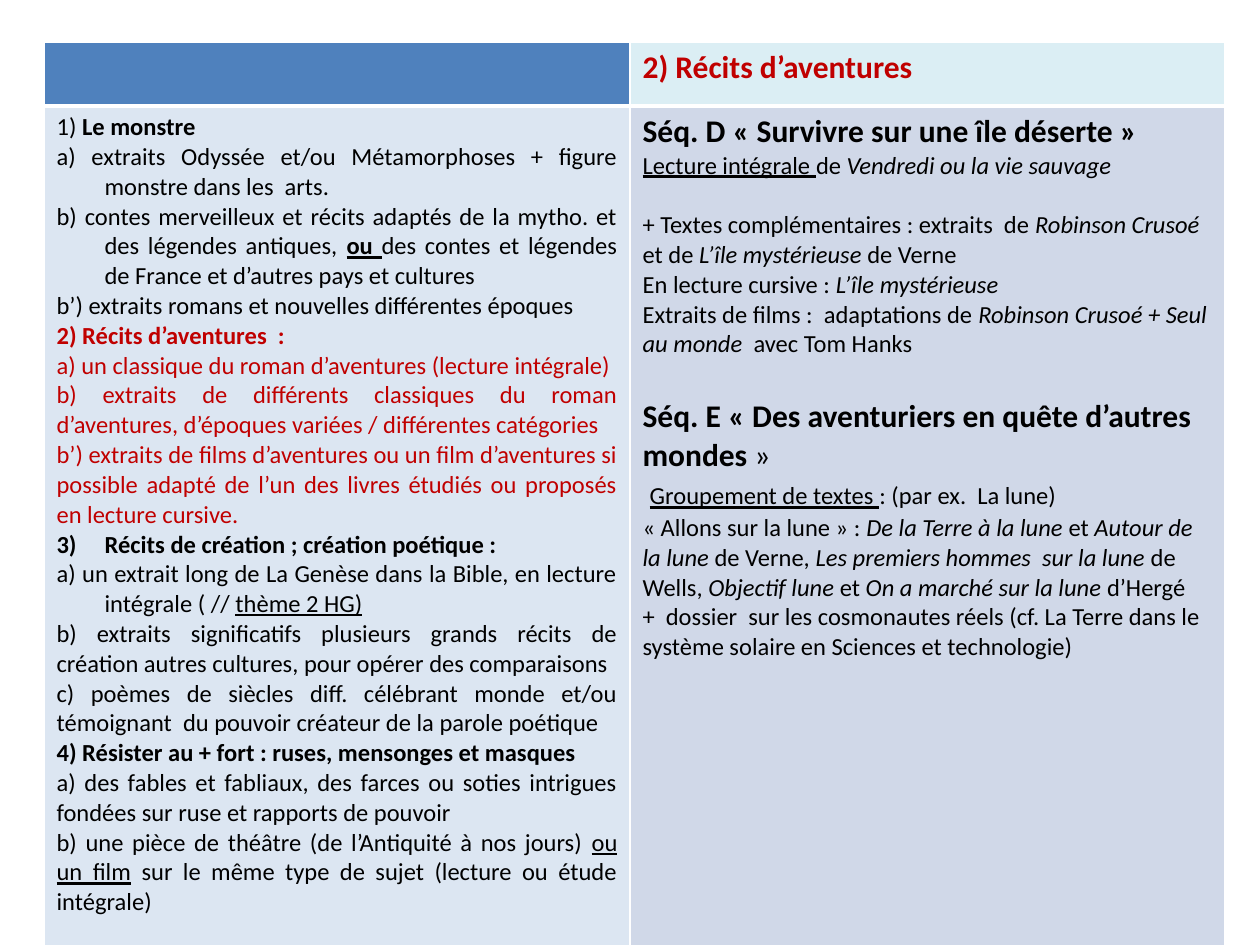
import pptx
import pptx.dml.color
import pptx.enum.text
import pptx.util
from lxml import etree

PX = pptx.util.Inches(1) / 126
BLACK = pptx.dml.color.RGBColor(0x00, 0x00, 0x00)
WHITE = pptx.dml.color.RGBColor(0xFF, 0xFF, 0xFF)
RED = pptx.dml.color.RGBColor(0xC0, 0x00, 0x00)
BLUE = pptx.dml.color.RGBColor(0x4F, 0x81, 0xBD)
PALE_CYAN = pptx.dml.color.RGBColor(0xDB, 0xEE, 0xF4)
PALE_BLUE = pptx.dml.color.RGBColor(0xDC, 0xE6, 0xF2)
GREY_BLUE = pptx.dml.color.RGBColor(0xD0, 0xD8, 0xE8)

FONT = "Calibri"
BODY_SIZE, TITLE_SIZE = 14, 18
HANGING = 48
# Each mark switches its style on or off inside a paragraph; # is the title size.
MARKS = "*_~#"

HEADING = "#*2) Récits d’aventures"

# Text, colour, hanging indent, first automatic number
PROGRAMME = [
    ("1) *Le monstre ", BLACK, True, None),
    ("a) extraits Odyssée et/ou Métamorphoses + figure monstre dans les  arts.", BLACK, True, None),
    ("b) contes merveilleux et récits adaptés de la mytho. et des légendes antiques, "
     "*_ou *_des contes et légendes de France et d’autres pays et cultures", BLACK, True, None),
    ("b’) extraits romans et nouvelles différentes époques", BLACK, False, None),
    ("*2) Récits d’aventures  :", RED, False, None),
    ("a) un classique du roman d’aventures (lecture intégrale)", RED, False, None),
    ("b) extraits de différents classiques du roman d’aventures, "
     "d’époques variées / différentes catégories", RED, False, None),
    ("b’) extraits de films d’aventures ou un film d’aventures si possible adapté "
     "de l’un des livres étudiés ou proposés en lecture cursive.", RED, False, None),
    ("*Récits de création ; création poétique :", BLACK, True, 3),
    ("a) un extrait long de La Genèse dans la Bible, en lecture intégrale "
     "( // _thème 2 HG)", BLACK, True, None),
    ("b) extraits significatifs plusieurs grands récits de création autres cultures, "
     "pour opérer des comparaisons", BLACK, False, None),
    ("c) poèmes de siècles diff. célébrant monde et/ou témoignant  du pouvoir créateur "
     "de la parole poétique", BLACK, False, None),
    ("*4) Résister au + fort : ruses, mensonges et masques", BLACK, False, None),
    ("a) des fables et fabliaux, des farces ou soties intrigues fondées sur ruse "
     "et rapports de pouvoir", BLACK, False, None),
    ("b) une pièce de théâtre (de l’Antiquité à nos jours) _ou un film_ sur le même type "
     "de sujet (lecture ou étude intégrale)", BLACK, False, None),
]

# Text, space before in points
SEQUENCES = [
    ("#*Séq. D « Survivre sur une île déserte » #*_Lecture intégrale _de "
     "~Vendredi ou la vie sauvage", 0),
    ("+ Textes complémentaires : extraits  de ~Robinson Crusoé ~et de "
     "~L’île mystérieuse ~de Verne", 17),
    ("En lecture cursive : ~L’île mystérieuse", 0),
    ("Extraits de films :  adaptations de ~Robinson Crusoé + Seul au monde~  avec Tom Hanks", 0),
    ("#*Séq. E « Des aventuriers en quête d’autres mondes* »", 22),
    ("# #_Groupement de textes _: (par ex.  La lune)", 0),
    ("« Allons sur la lune » : ~De la Terre à la lune ~et ~Autour de la lune ~de Verne, "
     "~Les premiers hommes  sur la lune ~de Wells, ~Objectif lune ~et "
     "~On a marché sur la lune ~d’Hergé", 0),
    ("+  dossier  sur les cosmonautes réels (cf. La Terre dans le système solaire "
     "en Sciences et technologie)", 0),
]


def px(value):
    return pptx.util.Emu(round(value * PX))


def split_marks(text):
    """Yield each stretch of text with the set of marks in force on it."""
    active, stretch = set(), ""
    for character in text:
        if character in MARKS:
            if stretch:
                yield stretch, set(active)
            active ^= {character}
            stretch = ""
        else:
            stretch += character
    yield stretch, active


def write_paragraph(paragraph, text, color):
    for stretch, active in split_marks(text):
        run = paragraph.add_run()
        run.text = stretch
        font = run.font
        font.name = FONT
        font.size = pptx.util.Pt(TITLE_SIZE if "#" in active else BODY_SIZE)
        font.bold = "*" in active
        font.underline = "_" in active
        font.italic = "~" in active
        font.color.rgb = color


def add_paragraphs(cell, count):
    """Return the cell's first paragraph followed by new ones."""
    frame = cell.text_frame
    return [frame.paragraphs[0]] + [frame.add_paragraph() for _ in range(count - 1)]


def add_xml(parent, tag, **attributes):
    element = etree.SubElement(parent, pptx.oxml.ns.qn(tag))
    for name, value in attributes.items():
        element.set(name, str(value))
    return element


def style_cell(cell, color, top=1, bottom=1):
    """Fill a cell and give it white borders, widths in points."""
    properties = cell._tc.get_or_add_tcPr()
    for side, width in (("L", 1), ("R", 1), ("T", top), ("B", bottom)):
        line = add_xml(properties, f"a:ln{side}", w=pptx.util.Pt(width))
        add_xml(add_xml(line, "a:solidFill"), "a:srgbClr", val=WHITE)
    cell.fill.solid()
    cell.fill.fore_color.rgb = color


def write_programme(cell):
    paragraphs = add_paragraphs(cell, len(PROGRAMME))
    for paragraph, (text, color, hanging, number) in zip(paragraphs, PROGRAMME):
        write_paragraph(paragraph, text, color)
        paragraph.alignment = pptx.enum.text.PP_ALIGN.JUSTIFY
        properties = paragraph._p.get_or_add_pPr()
        if hanging:
            properties.set("marL", str(px(HANGING)))
            properties.set("indent", str(-px(HANGING)))
        if number:
            add_xml(properties, "a:buFont", typeface=FONT)
            add_xml(properties, "a:buAutoNum", type="arabicParenR", startAt=number)


def write_sequences(cell):
    paragraphs = add_paragraphs(cell, len(SEQUENCES))
    for paragraph, (text, space_before) in zip(paragraphs, SEQUENCES):
        write_paragraph(paragraph, text, BLACK)
        if space_before:
            paragraph.space_before = pptx.util.Pt(space_before)


def add_programme_table(slide):
    widths, heights = (586, 595), (64, 844)
    frame = slide.shapes.add_table(2, 2, px(44), px(42), px(sum(widths)), px(sum(heights)))
    table = frame.table
    for column, width in zip(table.columns, widths):
        column.width = px(width)
    for row, height in zip(table.rows, heights):
        row.height = px(height)
    for index, (header_color, body_color) in enumerate(((BLUE, PALE_BLUE), (PALE_CYAN, GREY_BLUE))):
        style_cell(table.cell(0, index), header_color, bottom=3)
        style_cell(table.cell(1, index), body_color, top=3)
    return table


def main():
    presentation = pptx.Presentation()
    presentation.slide_width, presentation.slide_height = px(1260), px(945)
    slide = presentation.slides.add_slide(presentation.slide_layouts[6])
    table = add_programme_table(slide)
    write_paragraph(table.cell(0, 1).text_frame.paragraphs[0], HEADING, RED)
    write_programme(table.cell(1, 0))
    write_sequences(table.cell(1, 1))
    presentation.save("out.pptx")


if __name__ == "__main__":
    main()
